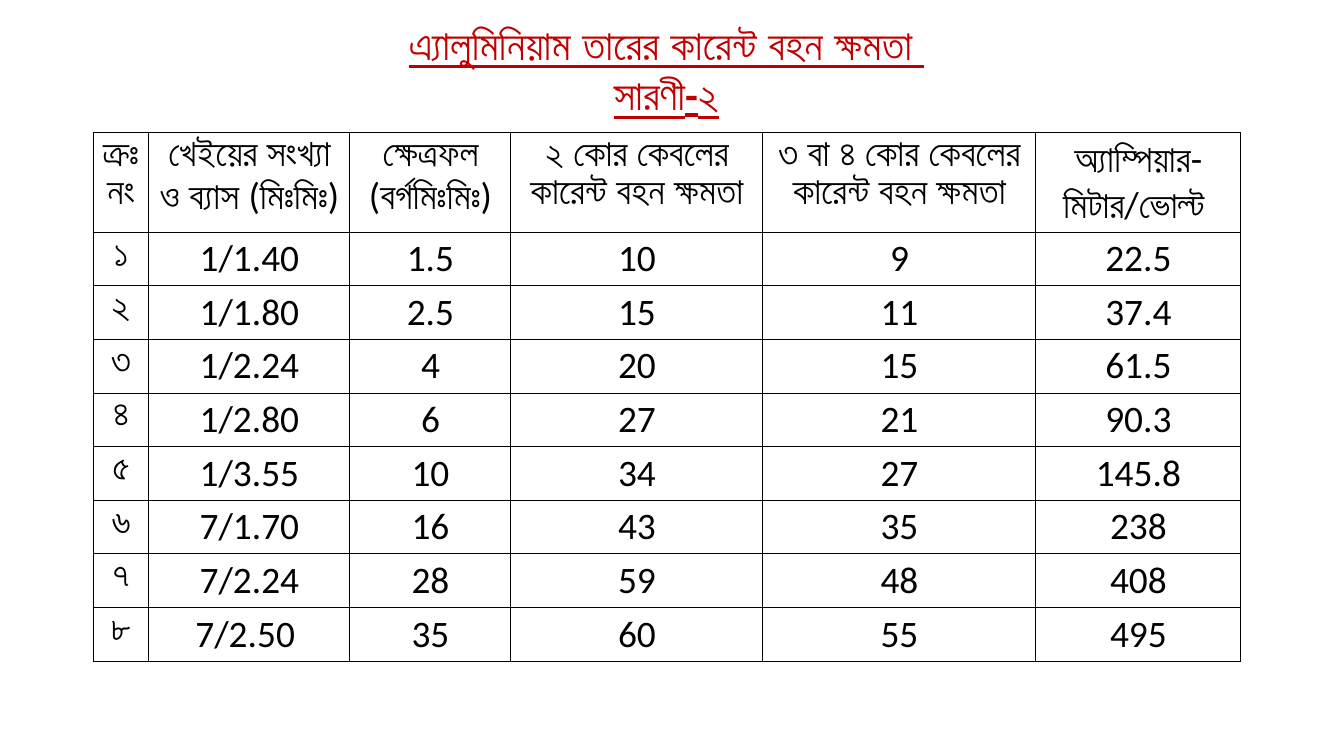
"""Build a slide with a table of current capacities for aluminium cables."""
from lxml import etree
from pptx import Presentation
from pptx.dml.color import RGBColor
from pptx.enum.text import MSO_ANCHOR, MSO_AUTO_SIZE, PP_ALIGN
from pptx.oxml.ns import qn
from pptx.util import Pt

PX = 914400 // 84
RED = RGBColor(0xC0, 0x00, 0x00)
BLACK = RGBColor(0x00, 0x00, 0x00)
CENTER = PP_ALIGN.CENTER
TOP = MSO_ANCHOR.TOP
FIXED = MSO_AUTO_SIZE.NONE
FONT = "Calibri"
TITLE_LINES = ["এ্যালুমিনিয়াম তারের কারেন্ট বহন ক্ষমতা ", "সারণী-২"]
COLUMN_WIDTHS = [56, 201, 161, 252, 273, 205]
HEADER_HEIGHT = 98
ROW_HEIGHT = 53
CELL_MARGIN = 4
ROWS = [
    ["ক্রঃ নং", "খেইয়ের সংখ্যা ও ব্যাস (মিঃমিঃ)", "ক্ষেত্রফল (বর্গমিঃমিঃ)",
     "২ কোর কেবলের কারেন্ট বহন ক্ষমতা", "৩ বা ৪ কোর কেবলের কারেন্ট বহন ক্ষমতা",
     "অ্যাম্পিয়ার-মিটার/ভোল্ট "],
    ["১", "1/1.40", "1.5", "10", "9", "22.5"],
    ["২", "1/1.80", "2.5", "15", "11", "37.4"],
    ["৩", "1/2.24", "4", "20", "15", "61.5"],
    ["৪", "1/2.80", "6", "27", "21", "90.3"],
    ["৫", "1/3.55", "10", "34", "27", "145.8"],
    ["৬", "7/1.70", "16", "43", "35", "238"],
    ["৭", "7/2.24", "28", "59", "48", "408"],
    ["৮", "7/2.50 ", "35", "60", "55", "495"],
]


def style_paragraph(paragraph, size, color):
    paragraph.alignment = CENTER
    paragraph.font.name = FONT
    paragraph.font.size = Pt(size)
    paragraph.font.color.rgb = color


def add_borders(cell):
    properties = cell._tc.get_or_add_tcPr()
    for side in ("a:lnL", "a:lnR", "a:lnT", "a:lnB"):
        line = etree.SubElement(properties, qn(side), w=str(Pt(1)))
        fill = etree.SubElement(line, qn("a:solidFill"))
        etree.SubElement(fill, qn("a:srgbClr"), val=str(BLACK))


deck = Presentation()
deck.slide_width = 1344 * PX
deck.slide_height = 756 * PX
page = deck.slides.add_slide(deck.slide_layouts[5])

title = page.shapes.title
title.left, title.top, title.width, title.height = 103 * PX, 14 * PX, 1127 * PX, 110 * PX
frame = title.text_frame
frame.text = "\n".join(TITLE_LINES)
frame.word_wrap = True
frame.auto_size = FIXED
frame.vertical_anchor = TOP
for paragraph in frame.paragraphs:
    style_paragraph(paragraph, 36, RED)
    paragraph.font.bold = True
    paragraph.font.underline = True

table_height = HEADER_HEIGHT + ROW_HEIGHT * (len(ROWS) - 1)
table = page.shapes.add_table(
    len(ROWS), len(COLUMN_WIDTHS), 93 * PX, 133 * PX,
    sum(COLUMN_WIDTHS) * PX, table_height * PX).table
table.first_row = False
table.horz_banding = False
for column, width in zip(table.columns, COLUMN_WIDTHS):
    column.width = width * PX

for row_index, (row, values) in enumerate(zip(table.rows, ROWS)):
    row.height = (ROW_HEIGHT if row_index else HEADER_HEIGHT) * PX
    for cell, value in zip(row.cells, values):
        cell.text = value
        cell.margin_top = cell.margin_bottom = CELL_MARGIN * PX
        cell.vertical_anchor = TOP
        style_paragraph(cell.text_frame.paragraphs[0], 32, BLACK)
        add_borders(cell)
        cell.fill.background()

deck.save("out.pptx")
